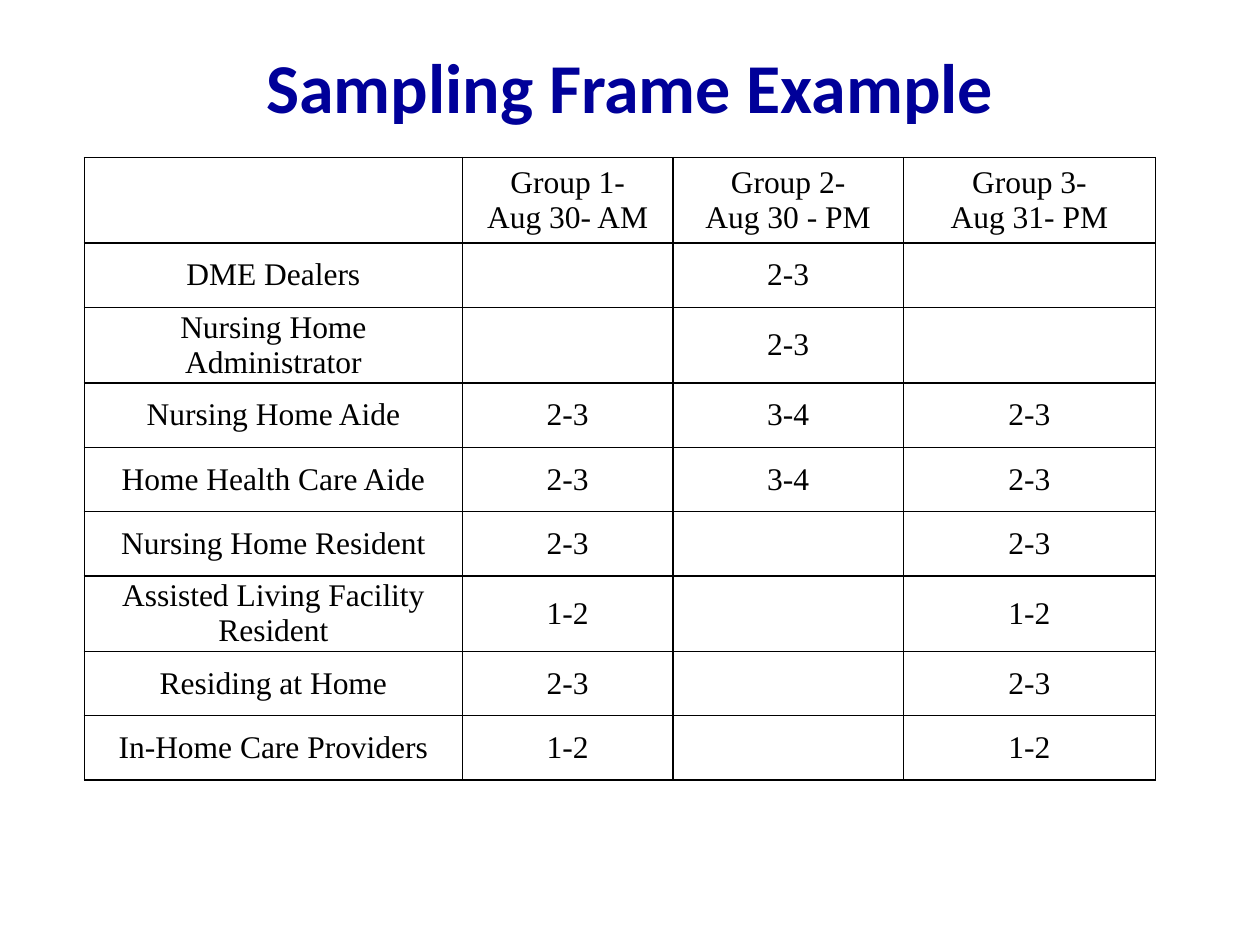
from lxml import etree
from pptx import Presentation
from pptx import util as u
from pptx.dml.color import RGBColor
from pptx.enum import text
from pptx.oxml import ns

COLORS = {"title": "000099", "text": "000000", "border": "000000"}
COL_WIDTHS = [3, 1.67, 1.83, 2]
HEADER_HEIGHT, ROW_HEIGHT = 0.68, 0.51
ROWS = [
    ["", "Group 1-\nAug 30- AM", "Group 2-\nAug 30 - PM", "Group 3-\nAug 31- PM"],
    ["DME Dealers", "", "2-3", ""],
    ["Nursing Home Administrator", "", "2-3", ""],
    ["Nursing Home Aide", "2-3", "3-4", "2-3"],
    ["Home Health Care Aide", "2-3", "3-4", "2-3"],
    ["Nursing Home Resident", "2-3", "", "2-3"],
    ["Assisted Living Facility Resident", "1-2", "", "1-2"],
    ["Residing at Home", "2-3", "", "2-3"],
    ["In-Home Care Providers", "1-2", "", "1-2"],
]


def style_paragraph(p, font, size, color, bold=False):
    p.alignment = text.PP_ALIGN.CENTER
    p.font.name = font
    p.font.size = u.Pt(size)
    p.font.bold = bold
    p.font.color.rgb = RGBColor.from_string(COLORS[color])


def add_borders(cell, width):
    tc_pr = cell._tc.get_or_add_tcPr()
    for side in ("lnL", "lnR", "lnT", "lnB"):
        ln = etree.SubElement(tc_pr, ns.qn(f"a:{side}"), w=str(u.Pt(width)))
        fill = etree.SubElement(ln, ns.qn("a:solidFill"))
        etree.SubElement(fill, ns.qn("a:srgbClr"), val=COLORS["border"])


def add_title(slide, left, top, width, height):
    tf = slide.shapes.add_textbox(left, top, width, height).text_frame
    tf.word_wrap = True
    tf.text = "Sampling Frame Example"
    style_paragraph(tf.paragraphs[0], "Calibri", 40, "title", bold=True)


def fill_cell(cell, content):
    cell.margin_left = cell.margin_right = u.Inches(0.07)
    cell.margin_top = cell.margin_bottom = 0
    cell.vertical_anchor = text.MSO_ANCHOR.MIDDLE
    add_borders(cell, 1)
    cell.fill.background()
    cell.text = content
    for p in cell.text_frame.paragraphs:
        style_paragraph(p, "Times New Roman", 18, "text")


def add_sampling_table(slide, left, top):
    heights = [HEADER_HEIGHT] + [ROW_HEIGHT] * (len(ROWS) - 1)
    table = slide.shapes.add_table(
        len(ROWS), len(COL_WIDTHS), left, top,
        u.Inches(sum(COL_WIDTHS)), u.Inches(sum(heights))).table
    table.first_row = table.horz_banding = False
    for column, width in zip(table.columns, COL_WIDTHS):
        column.width = u.Inches(width)
    for row, height, contents in zip(table.rows, heights, ROWS):
        row.height = u.Inches(height)
        for cell, content in zip(row.cells, contents):
            fill_cell(cell, content)


def main():
    prs = Presentation()
    prs.slide_width, prs.slide_height = u.Inches(10), u.Inches(7.5)
    slide = prs.slides.add_slide(prs.slide_layouts[6])
    # Title
    add_title(slide, u.Inches(0.5), u.Inches(0.3), u.Inches(9), u.Inches(1.25))
    # Participants per group
    add_sampling_table(slide, u.Inches(0.67), u.Inches(1.25))
    prs.save("out.pptx")


if __name__ == "__main__":
    main()
